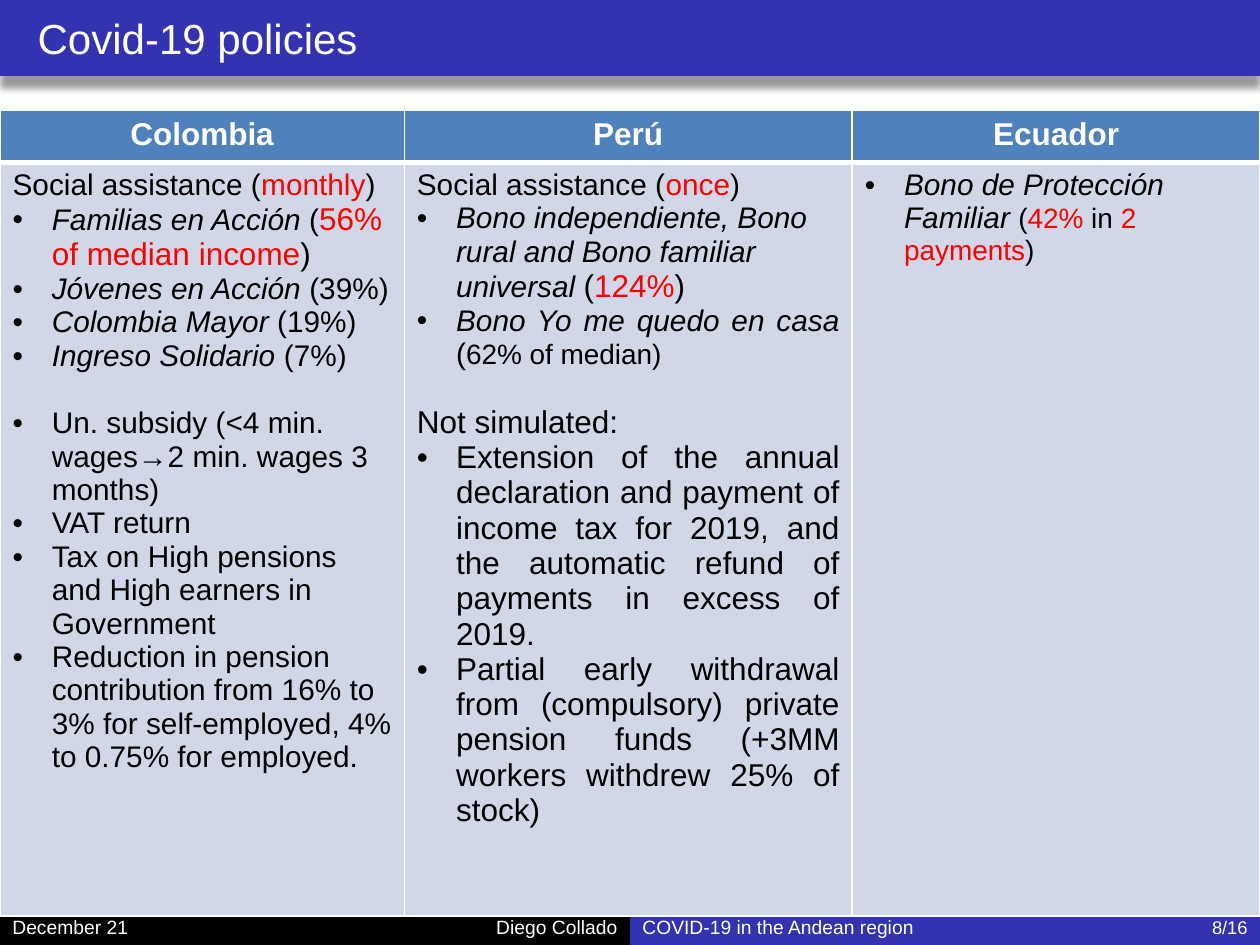
from lxml.etree import SubElement
from pptx import Presentation
from pptx.dml.color import RGBColor
from pptx.enum.shapes import MSO_SHAPE
from pptx.enum.text import MSO_ANCHOR, PP_ALIGN
from pptx.oxml import parse_xml
from pptx.oxml.ns import nsdecls, qn
from pptx.util import Cm, Pt

COLORS = {
    "bar": "3333B2", "black": "000000", "white": "FFFFFF",
    "header": "4F81BD", "body": "D0D8E8", "accent": "FF0000",
}
FONT = "Arial"
PAGE_WIDTH, PAGE_HEIGHT = 25.4, 19.05
INDENT = 0.79
GAP = 19.5  # points, one line of body text

# Each paragraph is (spans, format); each span is (text, size, format)
ITALIC, RED = {"italic": True}, {"color": "accent"}
BULLET = {"bullet": True}
JUSTIFY = {"align": PP_ALIGN.JUSTIFY}
BULLET_JUSTIFY = {**BULLET, **JUSTIFY}


def assistance(frequency):
    return [("Social assistance (", 17, {}), (frequency, 17, RED), (")", 17, {})], {}


def program(name, share):
    return [(name + " ", 17, ITALIC), (share, 17, {})], BULLET


def point(text, size=17, **style):
    return [(text, size, {})], {**BULLET, **style}


POLICIES = {
    "Colombia": [
        assistance("monthly"),
        ([("Familias en Acción ", 17, ITALIC), ("(", 17, {}),
          ("56% of median income", 18, RED), (")", 18, {})], BULLET),
        program("Jóvenes en Acción", "(39%)"),
        program("Colombia Mayor", "(19%)"),
        program("Ingreso Solidario", "(7%)"),
        point("Un. subsidy (<4 min. wages→2 min. wages 3 months)", before=GAP),
        point("VAT return"),
        point("Tax on High pensions and High earners in Government"),
        point("Reduction in pension contribution from 16% to 3% for "
              "self-employed, 4% to 0.75% for employed."),
    ],
    "Perú": [
        assistance("once"),
        ([("Bono independiente, Bono rural and Bono familiar universal ", 17, ITALIC),
          ("(", 18, {}), ("124%", 18, RED), (")", 18, {})], BULLET),
        ([("Bono Yo me quedo en casa ", 17, ITALIC), ("(", 17, {}),
          ("62% of median)", 16, {})], BULLET_JUSTIFY),
        ([("Not simulated:", 18, {})], {**JUSTIFY, "before": GAP}),
        point("Extension of the annual declaration and payment of income tax for "
              "2019, and the automatic refund of payments in excess of 2019.",
              18, **JUSTIFY),
        point("Partial early withdrawal from (compulsory) private pension funds "
              "(+3MM workers withdrew 25% of stock)", 18, **JUSTIFY),
    ],
    "Ecuador": [
        ([("Bono de Protección Familiar ", 17, ITALIC), ("(", 16, {}),
          ("42%", 16, RED), (" in ", 16, {}), ("2 payments", 16, RED),
          (")", 16, {})], BULLET),
    ],
}


def add_span(para, text, size, color="black", bold=False, italic=False):
    span = para.add_run()
    span.text = text
    font = span.font
    font.name, font.size = FONT, Pt(size)
    font.bold, font.italic = bold, italic
    font.color.rgb = RGBColor.from_string(COLORS[color])


def format_para(para, align=PP_ALIGN.LEFT, bullet=False, before=0):
    para.alignment = align
    para.space_before = Pt(before)
    if bullet:
        props = para._p.get_or_add_pPr()
        props.set("marL", str(Cm(INDENT)))
        props.set("indent", str(-Cm(INDENT)))
        SubElement(props, qn("a:buFont"), typeface=FONT)
        SubElement(props, qn("a:buChar"), char="•")


def add_label(page, box, text, size, align=PP_ALIGN.LEFT, inset=0.25):
    left, top, width, height = map(Cm, box)
    frame = page.shapes.add_textbox(left, top, width, height).text_frame
    frame.word_wrap = True
    frame.vertical_anchor = MSO_ANCHOR.MIDDLE
    frame.margin_left = Cm(inset)
    para = frame.paragraphs[0]
    format_para(para, align)
    add_span(para, text, size, "white")


def add_bar(page, box, color):
    bar = page.shapes.add_shape(MSO_SHAPE.RECTANGLE, *map(Cm, box))
    bar.shadow.inherit = False
    bar.fill.solid()
    bar.fill.fore_color.rgb = RGBColor.from_string(COLORS[color])
    bar.line.fill.background()
    return bar


def add_title_bar(page, box, title):
    bar = add_bar(page, box, "bar")
    effects = bar._element.spPr.find(qn("a:effectLst"))
    effects.append(parse_xml(
        f'<a:outerShdw {nsdecls("a")} blurRad="{Pt(4)}" dist="{Pt(7)}" '
        f'dir="5400000" algn="t" rotWithShape="0"><a:srgbClr val="{COLORS["black"]}">'
        '<a:alpha val="40000"/></a:srgbClr></a:outerShdw>'))
    left, top, width, height = box
    add_label(page, (left, top, width - 0.64, height), title, 24, inset=0.76)


def add_footer(page, box, date, author, topic, number):
    left, top, width, height = box
    half = width / 2
    middle = left + half
    add_bar(page, (middle, top, half, height), "bar")
    add_bar(page, (left, top, half, height), "black")
    add_label(page, (middle - 9.73, top, 9.73, height), author, 11, PP_ALIGN.RIGHT)
    add_label(page, (left, top, 5.3, height), date, 11)
    add_label(page, (middle, top, 9.4, height), topic, 11)
    add_label(page, (left + width - 2.97, top, 2.97, height), number, 10.5,
              PP_ALIGN.RIGHT)


def style_cell(cell, color, top=1, bottom=1):
    cell.fill.solid()
    cell.fill.fore_color.rgb = RGBColor.from_string(COLORS[color])
    props = cell._tc.get_or_add_tcPr()
    # Borders come before the fill
    for index, (side, weight) in enumerate(zip("LRTB", (1, 1, top, bottom))):
        props.insert(index, parse_xml(
            f'<a:ln{side} {nsdecls("a")} w="{Pt(weight)}"><a:solidFill>'
            f'<a:srgbClr val="{COLORS["white"]}"/></a:solidFill></a:ln{side}>'))


def add_policy_table(page, box, policies, widths, header_height):
    left, top, width, height = map(Cm, box)
    table = page.shapes.add_table(2, len(policies), left, top, width, height).table
    table.rows[0].height = Cm(header_height)
    table.rows[1].height = height - Cm(header_height)
    for index, (country, paragraphs) in enumerate(policies.items()):
        table.columns[index].width = Cm(widths[index])
        # Country heading
        heading = table.cell(0, index)
        style_cell(heading, "header", bottom=3)
        para = heading.text_frame.paragraphs[0]
        format_para(para, PP_ALIGN.CENTER)
        add_span(para, country, 18, "white", bold=True)
        # Measures
        cell = table.cell(1, index)
        style_cell(cell, "body", top=3)
        frame = cell.text_frame
        for number, (spans, style) in enumerate(paragraphs):
            para = frame.add_paragraph() if number else frame.paragraphs[0]
            format_para(para, **style)
            for text, size, look in spans:
                add_span(para, text, size, **look)


def main():
    deck = Presentation()
    deck.slide_width, deck.slide_height = Cm(PAGE_WIDTH), Cm(PAGE_HEIGHT)
    page = deck.slides.add_slide(deck.slide_layouts[6])
    add_title_bar(page, (0, 0, PAGE_WIDTH, 1.53), "Covid-19 policies")
    add_footer(page, (0, 18.32, PAGE_WIDTH, 0.73), "December 21", "Diego Collado",
               "COVID-19 in the Andean region", "8/16")
    add_policy_table(page, (0, 2.23, PAGE_WIDTH, 16.24), POLICIES,
                     (8.15, 9.03, 8.22), 1.04)
    deck.save("out.pptx")


if __name__ == "__main__":
    main()
